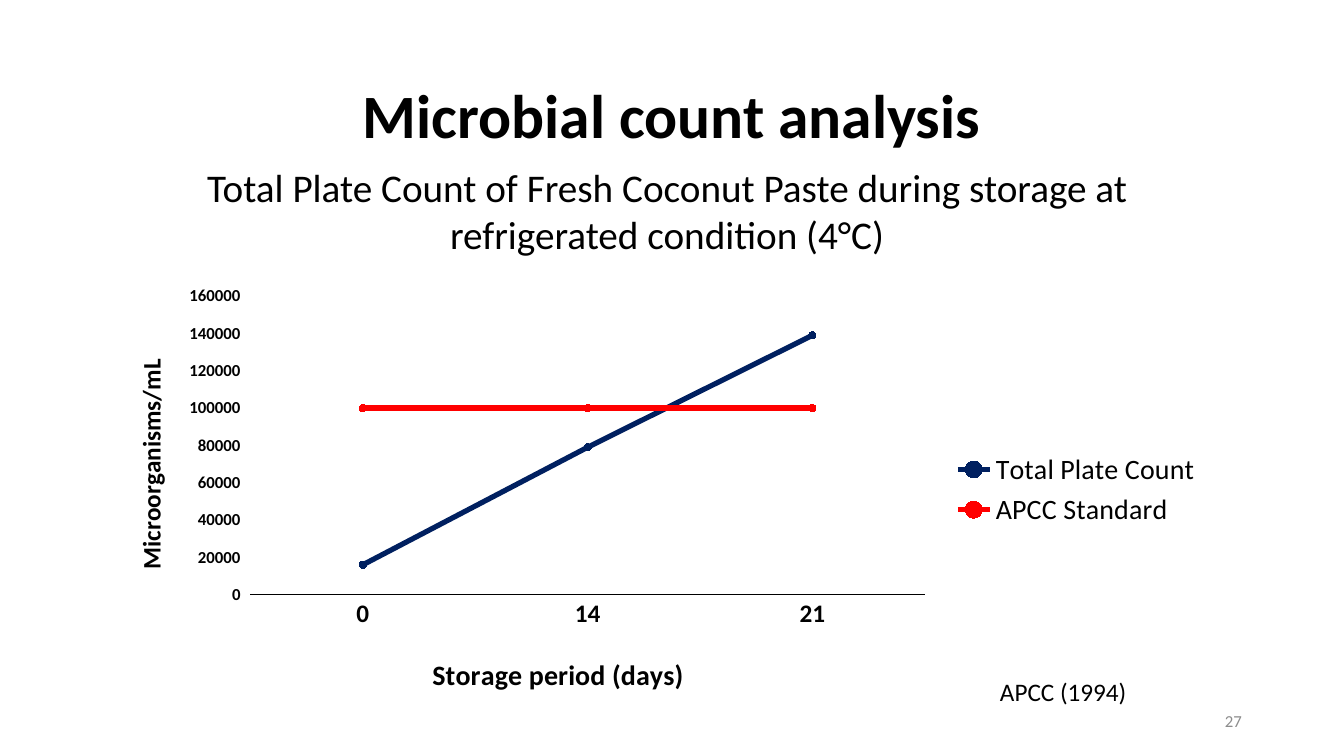
from lxml import etree
from pptx import Presentation
from pptx.chart.data import CategoryChartData
from pptx.dml.color import RGBColor
from pptx.enum.chart import XL_CHART_TYPE, XL_LEGEND_POSITION, XL_MARKER_STYLE, XL_TICK_MARK
from pptx.enum.text import MSO_ANCHOR, PP_ALIGN
from pptx.oxml.ns import qn
from pptx.util import Cm, Pt

BLACK = RGBColor(0x00, 0x00, 0x00)
GRAY = RGBColor(0x8C, 0x8C, 0x8C)
NAVY = RGBColor(0x00, 0x20, 0x60)
RED = RGBColor(0xFF, 0x00, 0x00)
FONT = "Calibri"

TEXTS = [
    ("Microbial count analysis", (2.33, 1.02, 29.21, 3.68), 44, True, BLACK, PP_ALIGN.CENTER),
    ("Total Plate Count of Fresh Coconut Paste during storage at refrigerated condition (4°C)",
     (3.07, 4.72, 27.48, 1.14), 28, False, BLACK, PP_ALIGN.CENTER),
    ("APCC (1994)", (24.56, 16.97, 4.47, 0.89), 18, False, BLACK, PP_ALIGN.CENTER),
    ("27", (23.93, 17.65, 7.62, 1.02), 12, False, GRAY, PP_ALIGN.RIGHT),
]
STORAGE_DAYS = ["0", "14", "21"]
COUNTS = [
    ("Total Plate Count", [16000, 79000, 139000], NAVY),
    ("APCC Standard", [100000, 100000, 100000], RED),
]
CHART_PLACE = (2.69, 7.04, 27.86, 10.62)
PLOT_LAYOUT = {"x": 0.13, "y": 0.04, "w": 0.61, "h": 0.71}
DAYS_TITLE = ("Storage period (days)", 20, {"x": 0.29, "y": 0.88})
COUNT_TITLE = ("Microorganisms/mL", 18, {"x": 0.02, "y": 0.18})


def style(font, size, bold=False, color=BLACK):
    font.name = FONT
    font.size = Pt(size)
    font.bold = bold
    font.color.rgb = color


def add_text(slide, text, place, size, bold, color, alignment):
    box = slide.shapes.add_textbox(*map(Cm, place))
    frame = box.text_frame
    frame.word_wrap = True
    frame.vertical_anchor = MSO_ANCHOR.MIDDLE
    paragraph = frame.paragraphs[0]
    paragraph.text = text
    paragraph.alignment = alignment
    style(paragraph.font, size, bold, color)


def set_layout(parent, position, fractions):
    for old in parent.findall(qn("c:layout")):
        parent.remove(old)
    layout = etree.Element(qn("c:layout"))
    manual = etree.SubElement(layout, qn("c:manualLayout"))
    if "w" in fractions:
        etree.SubElement(manual, qn("c:layoutTarget"), val="inner")
    for key in fractions:
        if key in "xy":
            etree.SubElement(manual, qn(f"c:{key}Mode"), val="edge")
    for key, fraction in fractions.items():
        etree.SubElement(manual, qn(f"c:{key}"), val=str(fraction))
    parent.insert(position, layout)


def title_axis(axis, title, size, fractions):
    axis.has_title = True
    paragraph = axis.axis_title.text_frame.paragraphs[0]
    paragraph.text = title
    style(paragraph.font, size, True)
    set_layout(axis.axis_title.element, 1, fractions)


def add_count_chart(slide):
    data = CategoryChartData(number_format="General")
    data.categories = STORAGE_DAYS
    for name, values, _ in COUNTS:
        data.add_series(name, values)
    chart = slide.shapes.add_chart(
        XL_CHART_TYPE.LINE_MARKERS, *map(Cm, CHART_PLACE), data).chart
    style(chart.font, 10)
    chart.has_title = False
    chart.has_legend = True
    chart.legend.position = XL_LEGEND_POSITION.RIGHT
    chart.legend.include_in_layout = False
    style(chart.legend.font, 20)

    chart.plots[0].vary_by_categories = False
    for series, (_, _, color) in zip(chart.plots[0].series, COUNTS):
        series.smooth = False
        series.format.line.color.rgb = color
        series.format.line.width = Pt(3.75)
        series.marker.style = XL_MARKER_STYLE.CIRCLE
        series.marker.size = 5
        series.marker.format.fill.solid()
        series.marker.format.fill.fore_color.rgb = color
        series.marker.format.line.color.rgb = color

    days = chart.category_axis
    days.major_tick_mark = XL_TICK_MARK.NONE
    days.format.line.color.rgb = BLACK
    days.format.line.width = Pt(0.75)
    style(days.tick_labels.font, 18, True)
    title_axis(days, *DAYS_TITLE)

    count = chart.value_axis
    count.has_major_gridlines = False
    count.minimum_scale, count.maximum_scale, count.major_unit = 0, 160000, 20000
    count.major_tick_mark = XL_TICK_MARK.OUTSIDE
    count.format.line.fill.background()
    style(count.tick_labels.font, 12, True)
    title_axis(count, *COUNT_TITLE)
    set_layout(chart.element.find(".//" + qn("c:plotArea")), 0, PLOT_LAYOUT)


def main():
    presentation = Presentation()
    presentation.slide_width = Cm(33.87)
    presentation.slide_height = Cm(19.05)
    slide = presentation.slides.add_slide(presentation.slide_layouts[6])
    add_count_chart(slide)
    for text in TEXTS:
        add_text(slide, *text)
    presentation.save("out.pptx")


if __name__ == "__main__":
    main()
